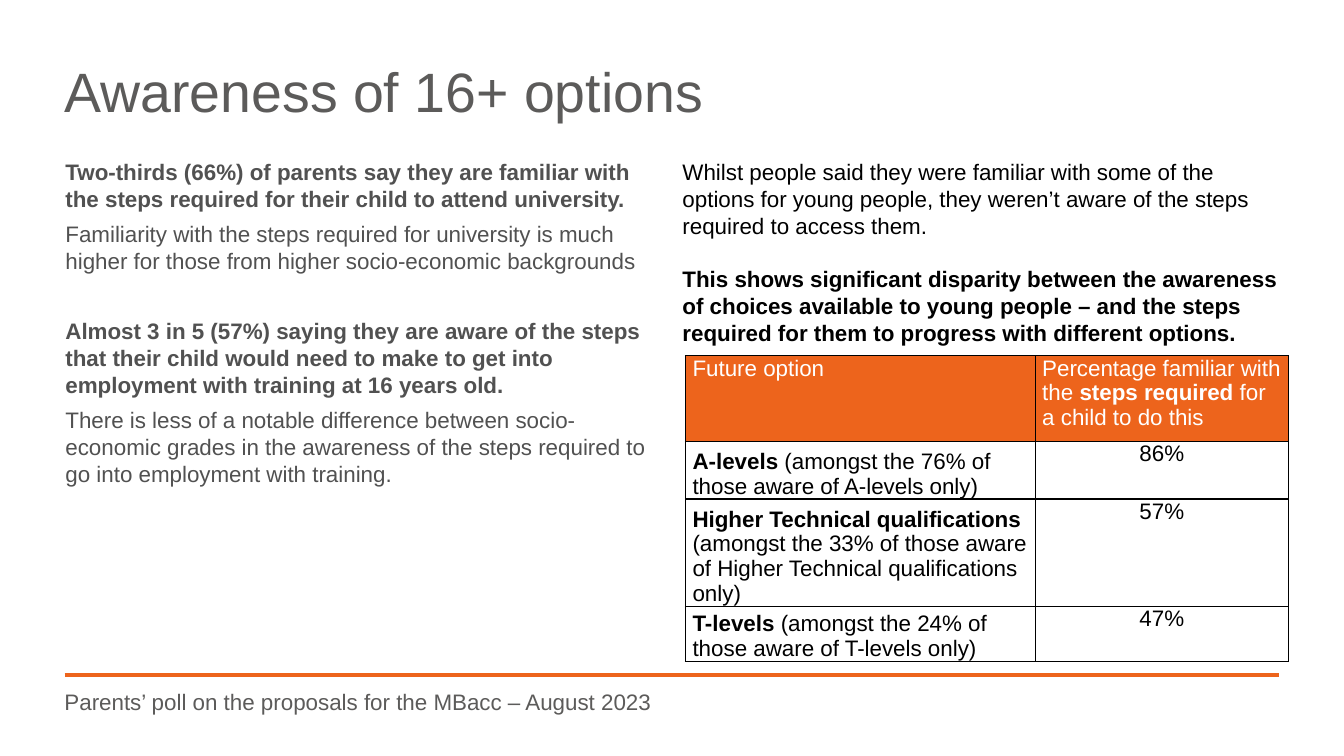
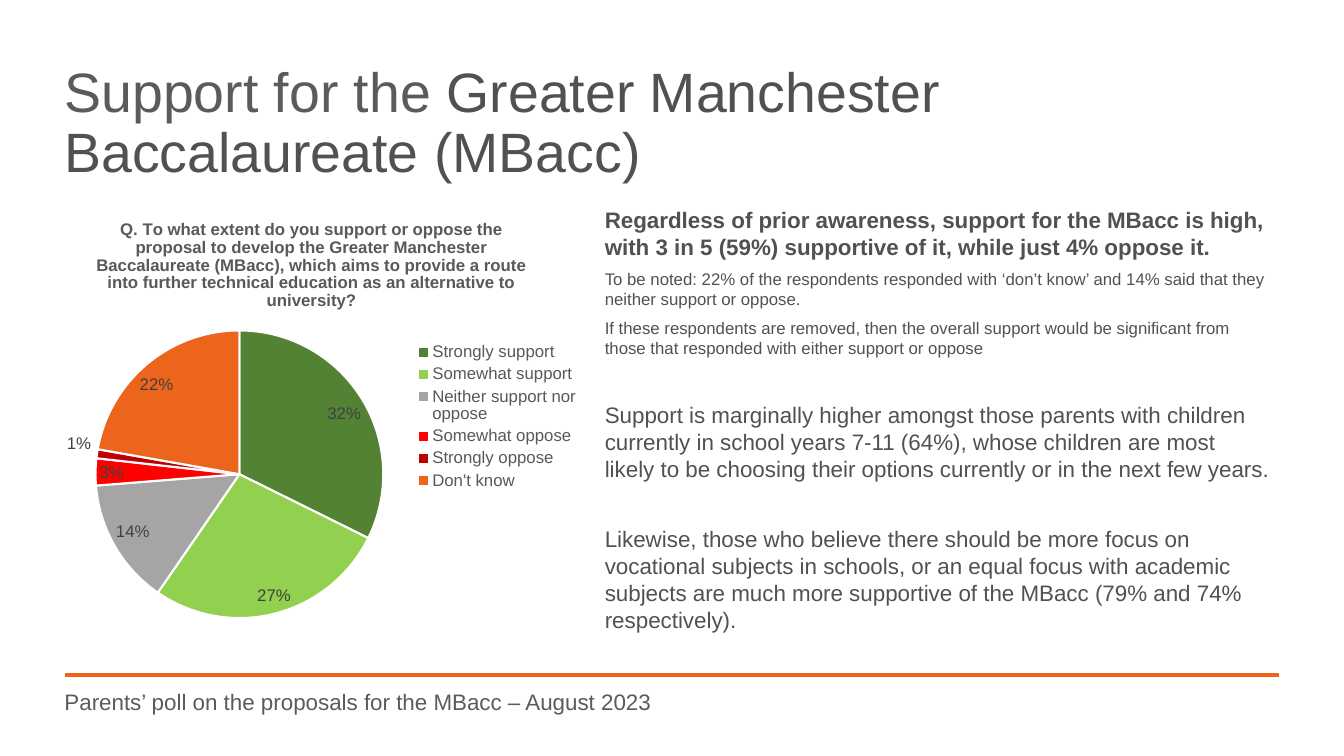
import pptx
import pptx.chart.data
import pptx.dml.color
import pptx.enum.chart
import pptx.enum.shapes
import pptx.enum.text
import pptx.oxml.ns
import pptx.oxml.xmlchemy
import pptx.util

Pt = pptx.util.Pt
ALIGN = pptx.enum.text.PP_ALIGN
ANCHOR = pptx.enum.text.MSO_ANCHOR
qn = pptx.oxml.ns.qn
new_element = pptx.oxml.xmlchemy.OxmlElement

FONT = "Arial"
COLORS = {
    "accent": "ED641C", "heading": "5C5B5A", "body": "515151",
    "legend": "595959", "label": "404040", "black": "000000", "white": "FFFFFF",
    "strong_for": "548235", "for": "92D050", "neutral": "A5A5A5",
    "against": "FF0000", "strong_against": "C00000",
}
BODY = {"size": 16, "color": "body", "space_after": Pt(6)}
NOTE = {**BODY, "size": 12}
SECTION_END = {"space_after": Pt(31)}
TITLE_SIZE = 39.6
WIDTH, HEIGHT = pptx.util.Inches(13.33), pptx.util.Inches(7.5)
LEFT, RIGHT = 4.8, 95.2
FOOTER = "Parents’ poll on the proposals for the MBacc – August 2023"


def rgb(name):
    return pptx.dml.color.RGBColor.from_string(COLORS[name])


def area(x, y, w, h):
    """Turn percentages of the slide into a box of whole EMU."""
    return (int(WIDTH * x / 100), int(HEIGHT * y / 100),
            int(WIDTH * w / 100), int(HEIGHT * h / 100))


def set_all(target, values):
    for name, value in values.items():
        setattr(target, name, value)


def style_font(font, size, color, bold=False):
    set_all(font, {"name": FONT, "size": Pt(size), "bold": bold})
    font.color.rgb = rgb(color)


def write(tf, paragraphs):
    """Fill a frame with (text, format) pairs; ** switches bold on and off."""
    for i, (text, fmt) in enumerate(paragraphs):
        p = tf.paragraphs[0] if i == 0 else tf.add_paragraph()
        fmt = dict(fmt)
        size, color = fmt.pop("size"), fmt.pop("color")
        set_all(p, fmt)
        for n, part in enumerate(text.split("**")):
            if part:
                r = p.add_run()
                r.text = part
                style_font(r.font, size, color, n % 2 == 1)


def text_block(slide, box, paragraphs, inset=True):
    tf = slide.shapes.add_textbox(*area(*box)).text_frame
    tf.word_wrap = True
    if not inset:
        set_all(tf, dict.fromkeys(
            ("margin_left", "margin_top", "margin_right", "margin_bottom"), 0))
    write(tf, paragraphs)
    return tf


def new_slide(prs, title, subject=""):
    """Add a slide with title, rule and footer; the subject ends the title darker."""
    slide = prs.slides.add_slide(prs.slide_layouts[6])
    x, y, w, _ = area(LEFT, 89.33, RIGHT - LEFT, 0)
    rule = slide.shapes.add_connector(
        pptx.enum.shapes.MSO_CONNECTOR.STRAIGHT, x, y, x + w, y)
    rule.line.color.rgb = rgb("accent")
    rule.line.width = Pt(3)
    rule._element.spPr.append(new_element("a:effectLst"))
    heading = {"color": "heading", "line_spacing": 0.9}
    tf = text_block(slide, (LEFT, 8.53, 91.5, 8.53),
                    [(title, {**heading, "size": TITLE_SIZE})], False)
    if subject:
        r = tf.paragraphs[0].add_run()
        r.text = subject
        style_font(r.font, TITLE_SIZE, "body")
    text_block(slide, (LEFT, 91.47, RIGHT - LEFT, 5.6),
               [(FOOTER, {**heading, "size": 16})], False)
    return slide


def border_cell(cell):
    tcPr = cell._tc.get_or_add_tcPr()
    for i, side in enumerate(("a:lnL", "a:lnR", "a:lnT", "a:lnB")):
        ln = new_element(side)
        ln.set("w", str(int(Pt(1))))
        fill = new_element("a:solidFill")
        color = new_element("a:srgbClr")
        color.set("val", COLORS["black"])
        fill.append(color)
        ln.append(fill)
        tcPr.insert(i, ln)


def options_table(slide, box, rows, col_shares, row_shares):
    x, y, w, h = area(*box)
    table = slide.shapes.add_table(len(rows), len(col_shares), x, y, w, h).table
    for col, share in zip(table.columns, col_shares):
        col.width = int(w * share)
    for row, share in zip(table.rows, row_shares):
        row.height = int(h * share)
    for i, row in enumerate(rows):
        for j, text in enumerate(row):
            cell = table.cell(i, j)
            head = i == 0
            set_all(cell, {
                "margin_left": Pt(5), "margin_right": Pt(5),
                "margin_top": 0, "margin_bottom": 0,
                "vertical_anchor": ANCHOR.TOP if head or j else ANCHOR.BOTTOM})
            if head:
                cell.fill.solid()
                cell.fill.fore_color.rgb = rgb("accent")
            else:
                cell.fill.background()
            border_cell(cell)
            write(cell.text_frame, [(text, {
                **BODY, "color": "white" if head else "black",
                "alignment": ALIGN.CENTER if j and not head else ALIGN.LEFT})])


def set_layout(parent, index, inner=False, **shares):
    """Place a chart part by shares of the chart's own box."""
    for old in parent.findall(qn("c:layout")):
        parent.remove(old)
    layout = new_element("c:layout")
    manual = new_element("c:manualLayout")
    values = {"layoutTarget": "inner"} if inner else {}
    values.update(xMode="edge", yMode="edge", **shares)
    for name, value in values.items():
        el = new_element("c:" + name)
        el.set("val", str(value))
        manual.append(el)
    layout.append(manual)
    parent.insert(index, layout)


def support_pie(slide, box, question, answers):
    data = pptx.chart.data.CategoryChartData()
    data.categories = [name for name, _, _ in answers]
    data.add_series("Series 1", [value for _, value, _ in answers])
    chart = slide.shapes.add_chart(
        pptx.enum.chart.XL_CHART_TYPE.PIE, *area(*box), data).chart
    style_font(chart.font, 10, "black")
    chart.has_title = True
    write(chart.chart_title.text_frame,
          [(f"**{question}**", {"size": 12, "color": "legend"})])

    chart.has_legend = True
    set_all(chart.legend, {"position": pptx.enum.chart.XL_LEGEND_POSITION.RIGHT,
                           "include_in_layout": False})
    style_font(chart.legend.font, 12, "legend")
    set_layout(chart.legend._element, 1, x=0.68, y=0.32, w=0.31, h=0.36)
    set_layout(chart._chartSpace.chart.plotArea, 0, True, x=0.11, y=0.3, w=0.52, h=0.67)

    plot = chart.plots[0]
    plot.vary_by_categories = True
    for i, (_, _, color) in enumerate(answers):
        fmt = plot.series[0].points[i].format
        fmt.fill.solid()
        fmt.fill.fore_color.rgb = rgb(color)
        fmt.line.color.rgb = rgb("white")
        fmt.line.width = Pt(1.5)
    plot.has_data_labels = True
    labels = plot.data_labels
    set_all(labels, {"show_percentage": True, "show_value": False,
                     "number_format": "0%", "number_format_is_linked": False,
                     "position": pptx.enum.chart.XL_LABEL_POSITION.BEST_FIT})
    style_font(labels.font, 12, "label")


def awareness_slide(prs):
    slide = new_slide(prs, "Awareness of 16+ options")
    text_block(slide, (4.13, 20.27, 44.86, 55.6), [
        ("**Two-thirds (66%) of parents say they are familiar with the steps required "
         "for their child to attend university.**", BODY),
        ("Familiarity with the steps required for university is much higher for those "
         "from higher socio-economic backgrounds", {**BODY, **SECTION_END}),
        ("**Almost 3 in 5 (57%) saying they are aware of the steps that their child would "
         "need to make to get into employment with training at 16 years old.**", BODY),
        ("There is less of a notable difference between socio-economic grades in the "
         "awareness of the steps required to go into employment with training.", BODY),
    ])
    plain = {"size": 16, "color": "black"}
    text_block(slide, (50.04, 20.27, 45.84, 40.8), [
        ("Whilst people said they were familiar with some of the options for young people, "
         "they weren’t aware of the steps required to access them.",
         {**plain, "space_after": Pt(19)}),
        ("**This shows significant disparity between the awareness of choices available to "
         "young people – and the steps required for them to progress with different "
         "options.**", plain),
    ])
    options_table(slide, (51.01, 47.07, 44.86, 40.27), [
        ("Future option",
         "Percentage familiar with the **steps required **for a child to do this"),
        ("**A-levels** (amongst the 76% of those aware of A-levels only)", "86%"),
        ("**Higher Technical qualifications **(amongst the 33% of those aware of "
         "Higher Technical qualifications only)", "57%"),
        ("**T-levels **(amongst the 24% of those aware of T-levels only)", "47%"),
    ], (0.58, 0.42), (0.28, 0.19, 0.35, 0.18))


def support_slide(prs):
    slide = new_slide(prs, "Support for the ", "Greater Manchester Baccalaureate (MBacc)")
    support_pie(
        slide, (2.55, 26.67, 41.26, 56.8),
        "Q. To what extent do you support or oppose the proposal to develop the Greater "
        "Manchester Baccalaureate (MBacc), which aims to provide a route into further "
        "technical education as an alternative to university?", [
            ("Strongly support", 32, "strong_for"),
            ("Somewhat support", 27, "for"),
            ("Neither support nor oppose", 14, "neutral"),
            ("Somewhat oppose", 3, "against"),
            ("Strongly oppose", 1, "strong_against"),
            ("Don't know", 22, "accent"),
        ])
    text_block(slide, (44.26, 26.67, 50.94, 66.67), [
        ("**Regardless of prior awareness, support for the MBacc is high, with 3 in 5 (59%) "
         "supportive of it, while just 4% oppose it.**", BODY),
        ("To be noted: 22% of the respondents responded with ‘don’t know’ and 14% said that "
         "they neither support or oppose.", NOTE),
        ("If these respondents are removed, then the overall support would be significant "
         "from those that responded with either support or oppose", {**NOTE, **SECTION_END}),
        ("Support is marginally higher amongst those parents with children currently in "
         "school years 7-11 (64%), whose children are most likely to be choosing their "
         "options currently or in the next few years.", {**BODY, **SECTION_END}),
        ("Likewise, those who believe there should be more focus on vocational subjects in "
         "schools, or an equal focus with academic subjects are much more supportive of the "
         "MBacc (79% and 74% respectively).", BODY),
    ])


def main():
    prs = pptx.Presentation()
    prs.slide_width, prs.slide_height = WIDTH, HEIGHT
    awareness_slide(prs)
    support_slide(prs)
    prs.save("out.pptx")


if __name__ == "__main__":
    main()
